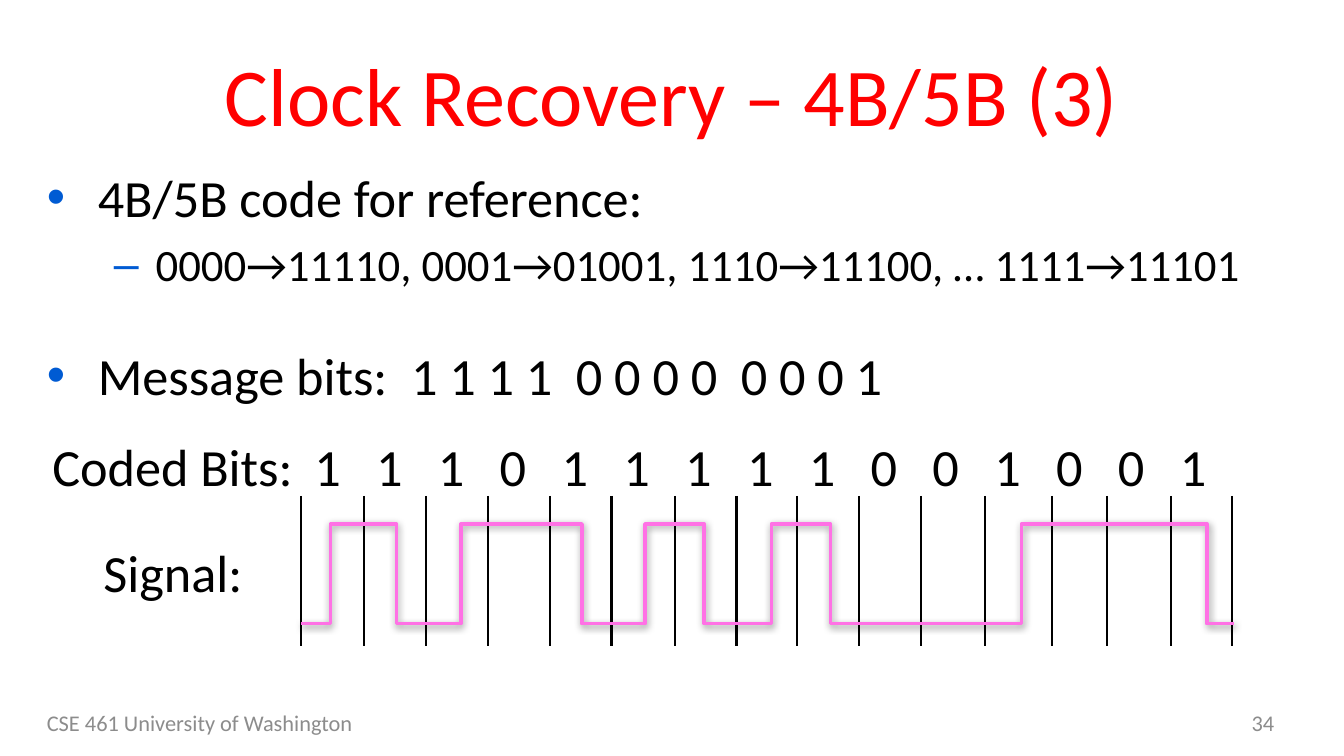
from dataclasses import dataclass

from lxml import etree
from pptx import Presentation
from pptx import util as u
from pptx.dml.color import RGBColor
from pptx.enum import shapes, text
from pptx.oxml import ns

PX = 9144  # EMU per px, 100 px to the inch
SLIDE_WIDTH = 1000


@dataclass(frozen=True)
class Theme:
    font: str = "Calibri"
    title: str = "FF0000"
    ink: str = "000000"
    bullet: str = "005BD3"
    muted: str = "8C8C8C"
    signal: str = "FF71E5"
    title_size: int = 44
    body_size: int = 28
    code_size: int = 24
    footer_size: int = 12


THEME = Theme()
TITLE = "Clock Recovery – 4B/5B (3)"
# text, level, size, bullet, left margin px, hanging px, space before pt
BODY = [
    ("4B/5B code for reference:", 0, THEME.body_size, "•", 38, 38, 5.6),
    ("0000→11110, 0001→01001, 1110→11100, … 1111→11101",
     1, THEME.code_size, "–", 81, 31, 4.8),
    ("Message bits:  1 1 1 1  0 0 0 0  0 0 0 1", 0, THEME.body_size, "•", 38, 38, 28),
]
LABELS = [("Coded Bits:", (39, 323, 181, 47)), ("Signal:", (77, 402, 104, 47))]
CODED_BITS = "111011111001001"
BIT_PITCH = 46
FOOTERS = [
    ("CSE 461 University of Washington", (25, 523, 317, 30), text.PP_ALIGN.LEFT),
    ("34", (725, 523, 233, 30), text.PP_ALIGN.RIGHT),
]
DIVIDERS = [224, 271, 317, 363, 409, 455, 502, 548,
            593, 639, 685, 733, 783, 824, 871, 917]
DIVIDER_TOP, DIVIDER_BOTTOM = 369, 481
SIGNAL_START, SIGNAL_END = 224, 918
TRANSITIONS = [246, 295, 343, 433, 480, 524, 574, 618, 760, 898]
SIGNAL_LOW, SIGNAL_HIGH = 464, 390


def px(*lengths):
    return [length * PX for length in lengths]


def color(value):
    return RGBColor.from_string(value)


def add_xml(parent, tag, **attributes):
    return etree.SubElement(parent, ns.qn(tag), attributes)


def add_run(paragraph, words, size, ink=THEME.ink):
    run = paragraph.add_run()
    run.text = words
    run.font.name = THEME.font
    run.font.size = u.Pt(size)
    run.font.color.rgb = color(ink)


def add_textbox(slide, box, wrap=True, anchor=text.MSO_ANCHOR.TOP, inset=None):
    frame = slide.shapes.add_textbox(*px(*box)).text_frame
    frame.word_wrap = wrap
    frame.vertical_anchor = anchor
    if inset is not None:
        frame.margin_left = frame.margin_right = inset
        frame.margin_top = frame.margin_bottom = inset
    return frame


def add_title(slide):
    title = slide.shapes.title
    title.left, title.top, title.width, title.height = px(25, 23, 950, 94)
    title.text_frame.vertical_anchor = text.MSO_ANCHOR.MIDDLE
    paragraph = title.text_frame.paragraphs[0]
    paragraph.alignment = text.PP_ALIGN.CENTER
    add_run(paragraph, TITLE, THEME.title_size, THEME.title)


def add_body(slide):
    frame = add_textbox(slide, (25, 118, 950, 371))
    for index, (words, level, size, bullet, margin, hanging, before) in enumerate(BODY):
        paragraph = frame.add_paragraph() if index else frame.paragraphs[0]
        paragraph.level = level
        paragraph.space_before = u.Pt(before)
        properties = paragraph._p.get_or_add_pPr()
        properties.set("marL", str(margin * PX))
        properties.set("indent", str(-hanging * PX))
        add_xml(add_xml(properties, "a:buClr"), "a:srgbClr", val=THEME.bullet)
        add_xml(properties, "a:buFont", typeface="Arial")
        add_xml(properties, "a:buChar", char=bullet)
        add_run(paragraph, words, size)


def add_footers(slide):
    for words, box, alignment in FOOTERS:
        paragraph = add_textbox(slide, box, anchor=text.MSO_ANCHOR.MIDDLE).paragraphs[0]
        paragraph.alignment = alignment
        add_run(paragraph, words, THEME.footer_size, THEME.muted)


def add_dividers(slide):
    group = slide.shapes.add_group_shape()
    for x in DIVIDERS:
        line = group.shapes.add_connector(
            shapes.MSO_CONNECTOR.STRAIGHT, *px(x, DIVIDER_TOP, x, DIVIDER_BOTTOM))
        line.line.color.rgb = color(THEME.ink)
        line.line.width = u.Pt(1.13)
        add_xml(line._element.spPr, "a:effectLst")


def add_labels(slide):
    for words, box in LABELS:
        frame = add_textbox(slide, box, wrap=False, inset=0)
        add_run(frame.paragraphs[0], words, THEME.body_size)


def add_coded_bits(slide):
    """Set the bits in one line, one tab stop per bit."""
    frame = add_textbox(slide, (224, 318, 726, 57), anchor=text.MSO_ANCHOR.MIDDLE)
    paragraph = frame.paragraphs[0]
    stops = add_xml(paragraph._p.get_or_add_pPr(), "a:tabLst")
    for index in range(1, len(CODED_BITS)):
        add_xml(stops, "a:tab", pos=str(index * BIT_PITCH * PX), algn="l")
    add_run(paragraph, "\t".join(CODED_BITS), THEME.body_size)


def add_signal(slide):
    """Trace the waveform, switching level at each transition."""
    points = []
    level, other = SIGNAL_LOW, SIGNAL_HIGH
    for x in TRANSITIONS:
        points += [(x, level), (x, other)]
        level, other = other, level
    points.append((SIGNAL_END, level))
    builder = slide.shapes.build_freeform(SIGNAL_START, SIGNAL_LOW, scale=PX)
    builder.add_line_segments(points, close=False)
    signal = builder.convert_to_shape()
    signal.fill.background()
    signal.line.color.rgb = color(THEME.signal)
    signal.line.width = u.Pt(2)
    signal.shadow.inherit = False
    effects = signal._element.spPr.find(ns.qn("a:effectLst"))
    shadow = add_xml(effects, "a:outerShdw", blurRad=str(u.Pt(4)), dist=str(u.Pt(1)),
                     dir="5400000", rotWithShape="0")
    shade = add_xml(shadow, "a:srgbClr", val=THEME.ink)
    add_xml(shade, "a:alpha", val="40000")


def main():
    presentation = Presentation()
    presentation.slide_width = SLIDE_WIDTH * PX
    presentation.slide_height = SLIDE_WIDTH * PX * 9 // 16
    slide = presentation.slides.add_slide(presentation.slide_layouts[5])
    add_title(slide)
    add_body(slide)
    add_footers(slide)
    add_dividers(slide)
    add_labels(slide)
    add_coded_bits(slide)
    add_signal(slide)
    presentation.save("out.pptx")


if __name__ == "__main__":
    main()
